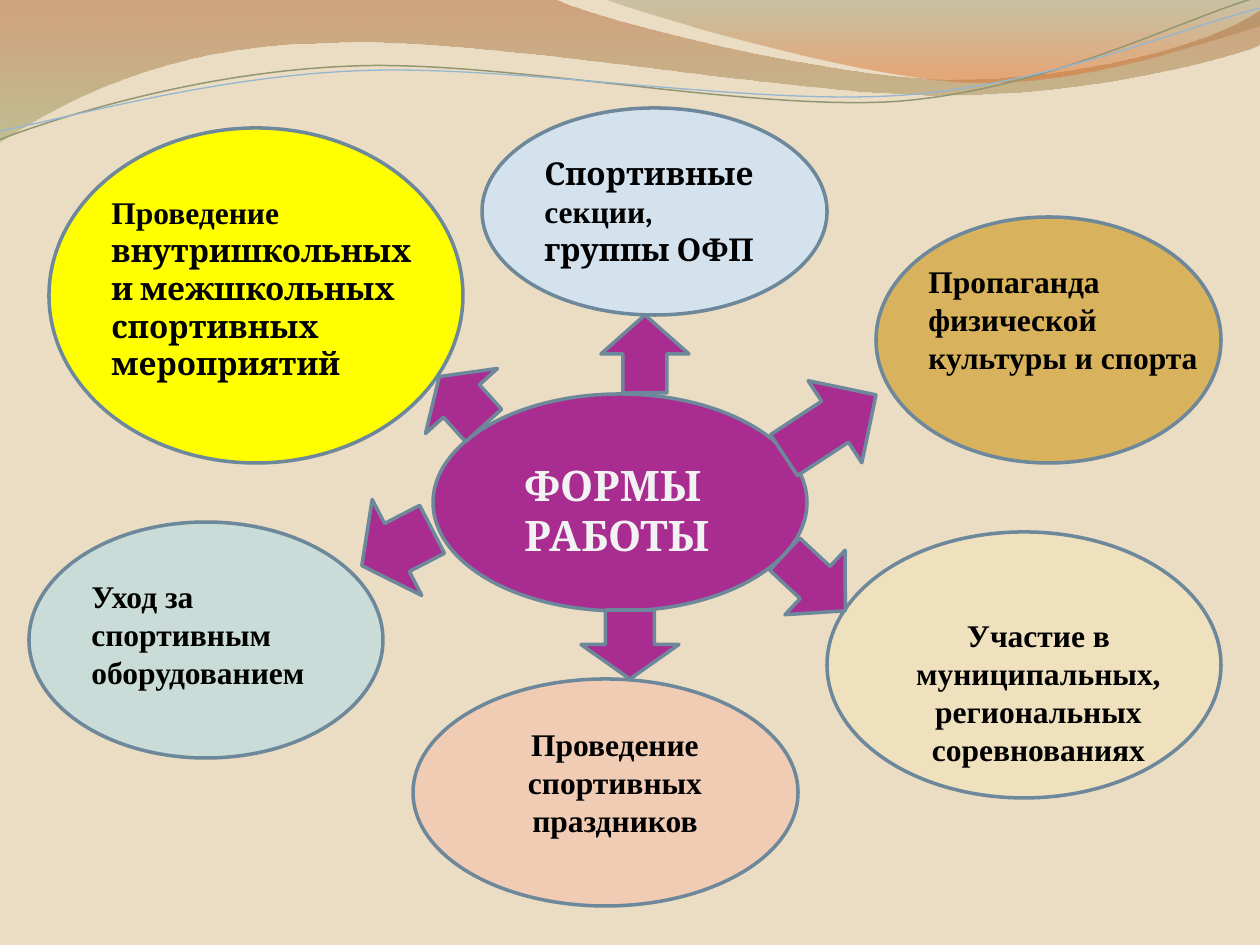
from lxml.etree import SubElement
from pptx import Presentation
from pptx.dml.color import RGBColor
from pptx.enum.shapes import MSO_SHAPE
from pptx.enum.text import MSO_AUTO_SIZE, PP_ALIGN
from pptx.oxml.ns import qn
from pptx.util import Pt

PX = 914400 / 126
HUES = {
    "sand": "EBDDC3", "rust": "AF5C29", "moss": "9DA66B", "olive": "7D835B",
    "orange": "DD6B24", "green": "929772", "sky": "94B6D2", "edge": "6D879B",
    "yellow": "FFFF00", "blue": "D4E2ED", "gold": "D8B25C", "cream": "EFE0BE",
    "peach": "F1CCB5", "mint": "CADCD8", "plum": "A92D91", "black": "000000",
    "white": "F2F2F2",
}
RGB = {name: RGBColor.from_string(code) for name, code in HUES.items()}
SERIF, HEAD = "Times New Roman", "Cambria"

deck = Presentation()
deck.slide_width, deck.slide_height = round(1260 * PX), round(945 * PX)
slide = deck.slides.add_slide(deck.slide_layouts[6])
slide.background.fill.solid()
slide.background.fill.fore_color.rgb = RGB["sand"]
shapes = slide.shapes


def add_path(start, parts, close):
    spots = [(p[i] * PX, p[i + 1] * PX) for p in parts for i in range(0, len(p), 2)]
    pen = shapes.build_freeform(start[0] * PX, start[1] * PX)
    pen.add_line_segments(spots, close=close)
    form = pen.convert_to_shape()
    form.shadow.inherit = False
    lines = iter(list(form._element.spPr.iter(qn("a:lnTo"))))
    for part in parts:
        first = next(lines)
        if len(part) == 6:
            curve = first.makeelement(qn("a:cubicBezTo"))
            first.addprevious(curve)
            for line in (first, next(lines), next(lines)):
                curve.append(line[0])
                line.getparent().remove(line)
    return form


def add_text(box, runs, size=18, hue="black", align=PP_ALIGN.LEFT):
    frame = shapes.add_textbox(*[round(n * PX) for n in box]).text_frame
    frame.word_wrap = True
    frame.auto_size = MSO_AUTO_SIZE.SHAPE_TO_FIT_TEXT
    para = frame.paragraphs[0]
    para.alignment = align
    for words, face in runs:
        run = para.add_run()
        run.text = words
        run.font.name, run.font.size, run.font.bold = face, Pt(size), True
        run.font.color.rgb = RGB[hue]


waves = [
    ((0, 0), [(554, -1), (600, 21, 837, 79, 955, 79), (1075, 79, 1207, 47, 1260, 11),
              (1261, 45), (1239, 55, 1096, 96, 940, 95), (784, 95, 481, 35, 324, 43),
              (163, 45, 58, 105, -1, 142), (0, 0)],
     [(0, "rust", 45), (1, "moss", 55)]),
    ((604, -1), [(641, 14, 859, 78, 969, 82), (1079, 87, 1211, 40, 1260, 26),
                 (1260, 0), (604, -1)],
     [(0, "olive", 30), (0.8, "orange", 45)]),
]
for start, parts, stops in waves:
    wave = add_path(start, parts, True)
    wave.line.fill.background()
    wave.fill.gradient()
    wave.fill.gradient_angle = 270
    for stop, (place, hue, _) in zip(wave.fill.gradient_stops, stops):
        stop.position = place
        stop.color.rgb = RGB[hue]
    for node, (_, _, alpha) in zip(wave._element.spPr.iter(qn("a:srgbClr")), stops):
        SubElement(node, qn("a:alpha"), val=str(alpha * 1000))

threads = [
    ((-3, 110), [(58, 90, 199, 52, 350, 53), (500, 53, 745, 117, 896, 114),
                 (1048, 109, 1184, 45, 1260, 27)], "green", 0.85),
    ((-2, 101), [(57, 94, 207, 57, 357, 58), (509, 58, 750, 112, 902, 108),
                 (1052, 104, 1189, 52, 1262, 38)], "sky", 0.75),
]
for start, parts, hue, width in threads:
    thread = add_path(start, parts, False)
    thread.rotation = 357.3
    thread.fill.background()
    thread.line.color.rgb = RGB[hue]
    thread.line.width = Pt(width)

OVAL, UP, DOWN = MSO_SHAPE.OVAL, MSO_SHAPE.UP_ARROW, MSO_SHAPE.DOWN_ARROW
blocks = [
    (OVAL, (49, 128, 414, 335), "yellow", 0),
    (OVAL, (482, 108, 345, 207), "blue", 0),
    (OVAL, (876, 217, 345, 246), "gold", 0),
    (OVAL, (827, 532, 394, 266), "cream", 0),
    (OVAL, (413, 679, 385, 227), "peach", 0),
    (OVAL, (29, 522, 354, 236), "mint", 0),
    (OVAL, (433, 394, 374, 217), "plum", 0),
    (UP, (601, 315, 88, 78), "plum", 0),
    (UP, (781, 370, 98, 110), "plum", 56.8),
    (UP, (771, 541, 88, 83), "plum", 133),
    (DOWN, (581, 610, 98, 69), "plum", 0),
    (DOWN, (343, 508, 108, 79), "plum", 62.7),
    (UP, (413, 368, 97, 66), "plum", 317.9),
]
for kind, box, hue, turn in blocks:
    block = shapes.add_shape(kind, *[round(n * PX) for n in box])
    block.shadow.inherit = False
    block.rotation = turn
    block.fill.solid()
    block.fill.fore_color.rgb = RGB[hue]
    block.line.color.rgb = RGB["edge"]
    block.line.width = Pt(2)

add_text((532, 148, 246, 127),
         [("Спортивные ", HEAD), ("секции", SERIF), (", группы ОФП", HEAD)])
add_text((512, 453, 246, 115), [("ФОРМЫ РАБОТЫ", HEAD)], size=24, hue="white")
add_text((916, 256, 295, 127), [("Пропаганда физической культуры и спорта", SERIF)])
add_text((886, 610, 305, 165),
         [("Участие в муниципальных, региональных соревнованиях", SERIF)],
         align=PP_ALIGN.CENTER)
add_text((472, 719, 286, 127), [("Проведение спортивных праздников", SERIF)],
         align=PP_ALIGN.CENTER)
add_text((79, 571, 276, 127), [("Уход за спортивным оборудованием", SERIF)])
add_text((99, 187, 335, 204),
         [("Проведение ", SERIF),
          ("внутришкольных и межшкольных спортивных мероприятий", HEAD)])

deck.save("out.pptx")
